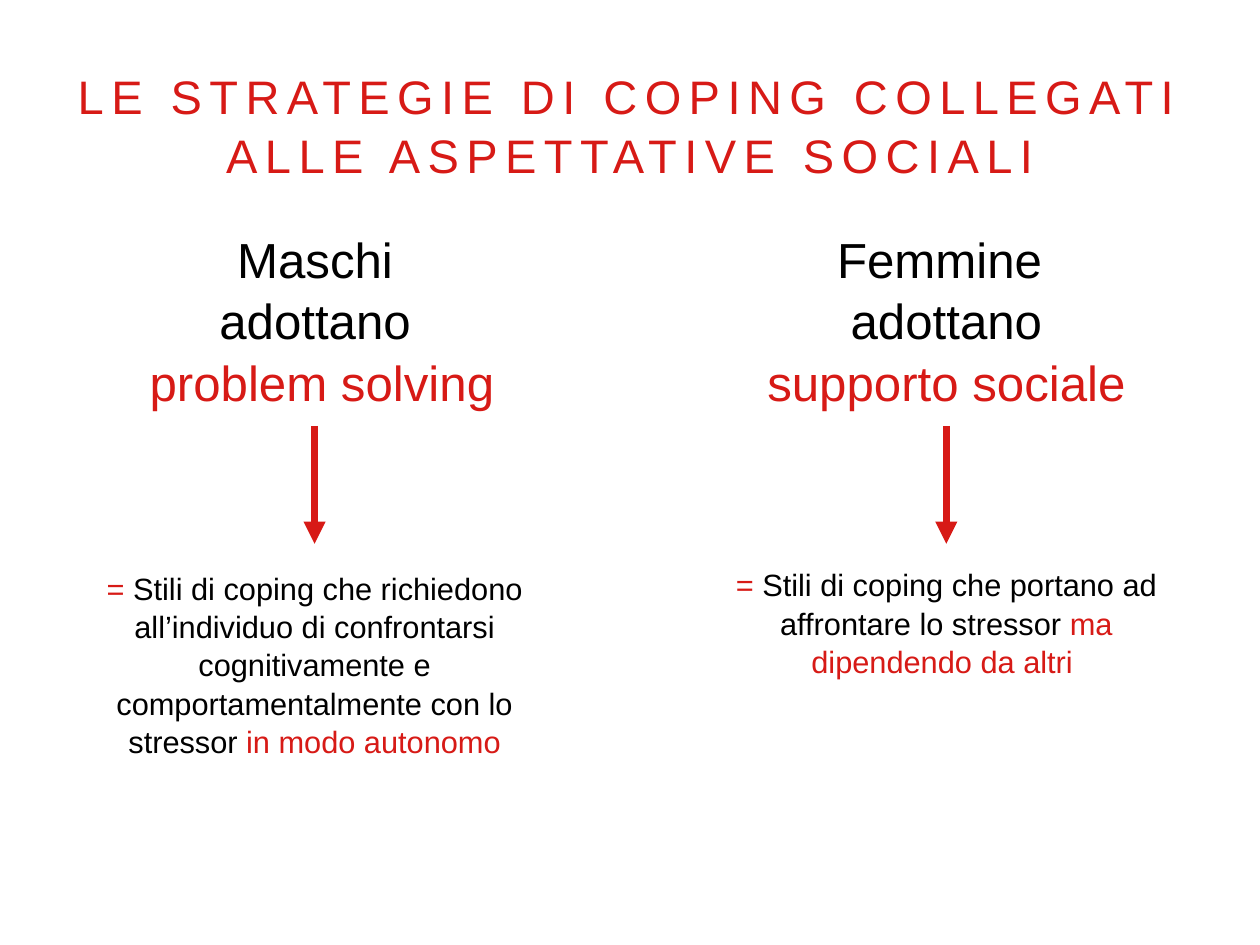
import pptx
import pptx.util
import pptx.dml.color
import pptx.enum.text
import pptx.enum.shapes
import pptx.oxml.ns
import lxml.etree

Inches, Pt = pptx.util.Inches, pptx.util.Pt
qn = pptx.oxml.ns.qn
RED, BLACK = "D71A16", "000000"


def rgb(color):
    return pptx.dml.color.RGBColor.from_string(color)


class Deck:
    """Holds the style and the current slide, and adds its elements."""

    font = "Arial"

    def __init__(self, width, height):
        self.prs = pptx.Presentation()
        self.prs.slide_width, self.prs.slide_height = Inches(width), Inches(height)
        self.s = self.prs.slides.add_slide(self.prs.slide_layouts[6])

    def text(self, x, y, w, h, paragraphs, size, wrap=True, spacing=0):
        sp = self.s.shapes.add_textbox(Inches(x), Inches(y), Inches(w), Inches(h))
        tf = sp.text_frame
        tf.margin_left = tf.margin_right = tf.margin_top = tf.margin_bottom = Inches(0.06)
        tf.word_wrap = wrap
        tf.vertical_anchor = pptx.enum.text.MSO_ANCHOR.MIDDLE
        for i, runs in enumerate(paragraphs):
            p = tf.paragraphs[0] if i == 0 else tf.add_paragraph()
            p.alignment = pptx.enum.text.PP_ALIGN.CENTER
            p.line_spacing = 1.04
            p.font.name, p.font.size = self.font, Pt(size)
            for words, color in runs:
                r = p.add_run()
                r.text = words
                r.font.color.rgb = rgb(color)
                if spacing:
                    r.font._element.set("spc", str(spacing))
        return sp

    def arrow(self, x, top, bottom):
        c = self.s.shapes.add_connector(
            pptx.enum.shapes.MSO_CONNECTOR.STRAIGHT,
            Inches(x), Inches(top), Inches(x), Inches(bottom))
        c.line.color.rgb = rgb(RED)
        c.line.width = Pt(6)
        lxml.etree.SubElement(c.line._get_or_add_ln(), qn("a:tailEnd"), type="triangle")
        lxml.etree.SubElement(c._element.spPr, qn("a:effectLst"))


def main():
    d = Deck(14.22, 10.67)
    d.text(0.72, 0.62, 12.78, 1.56,
           [[("LE STRATEGIE DI COPING COLLEGATI ALLE ASPETTATIVE SOCIALI", RED)]],
           38.2, spacing=610)
    columns = [
        (1.43, 4.25, "Maschi", [(" ", BLACK), ("problem solving", RED)],
         3.55, 0.93, 2.47,
         "Stili di coping che richiedono all’individuo di confrontarsi "
         "cognitivamente e comportamentalmente con lo stressor ",
         "in modo autonomo"),
        (8.57, 4.22, "Femmine ", [("supporto sociale", RED)],
         10.68, 8.06, 1.53,
         "Stili di coping che portano ad affrontare lo stressor ",
         "ma dipendendo da altri "),
    ]
    for x, w, group, strategy, arrow_x, style_x, style_h, style, outcome in columns:
        d.text(x, 2.4, w, 2.4, [[(group, BLACK)], [("adottano", BLACK)], strategy],
               40, wrap=False)
        d.arrow(arrow_x, 4.81, 6.14)
        d.text(style_x, 6.26, 5.24, style_h,
               [[("= ", RED), (style, BLACK), (outcome, RED)]], 25)
    d.prs.save("out.pptx")


if __name__ == "__main__":
    main()
